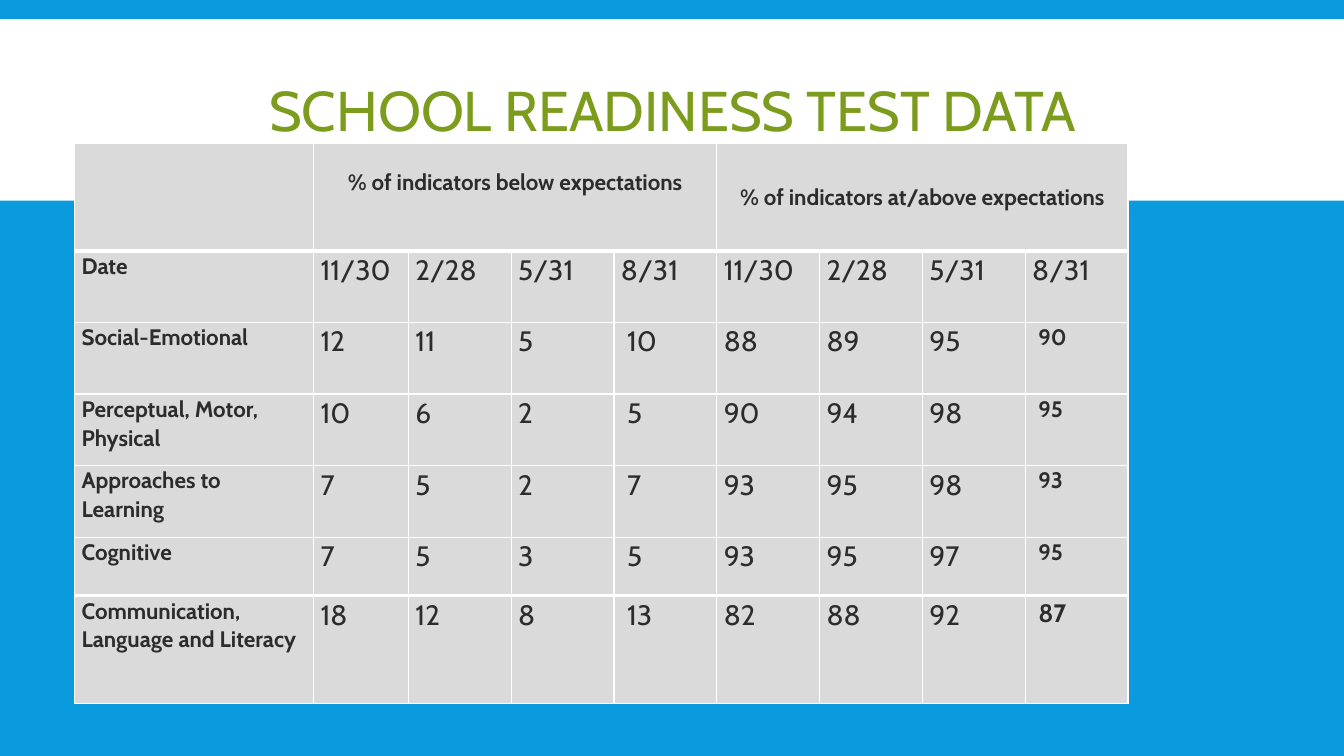
from dataclasses import dataclass
from lxml import etree
from pptx import Presentation
from pptx.dml.color import RGBColor
from pptx.enum.shapes import MSO_SHAPE
from pptx.enum.text import MSO_ANCHOR, MSO_AUTO_SIZE, PP_ALIGN
from pptx.oxml.ns import qn
from pptx.util import Pt

RECT = MSO_SHAPE.RECTANGLE
MID, TOP = MSO_ANCHOR.MIDDLE, MSO_ANCHOR.TOP
MID_X, LEFT = PP_ALIGN.CENTER, PP_ALIGN.LEFT
FIXED = MSO_AUTO_SIZE.NONE


@dataclass(frozen=True)
class Theme:
    font: str = "Cabin"
    back: str = "099BDD"
    white: str = "FFFFFF"
    head: str = "7C9C1E"
    ink: str = "2C2C2C"
    cell: str = "DADADA"
    title: int = 40
    label: int = 16
    last: int = 18
    value: int = 20
    thin: int = 1
    thick: int = 3


THEME = Theme()
TITLE = "SCHOOL READINESS TEST DATA"
GROUPS = ["% of indicators below expectations",
          "% of indicators at/above expectations"]
DATES = ["11/30", "2/28", "5/31", "8/31"]
DATA = [
    ("Social-Emotional", 12, 11, 5, 10, 88, 89, 95, 90),
    ("Perceptual, Motor, Physical", 10, 6, 2, 5, 90, 94, 98, 95),
    ("Approaches to Learning", 7, 5, 2, 7, 93, 95, 98, 93),
    ("Cognitive", 7, 5, 3, 5, 93, 95, 97, 95),
    ("Communication, Language and Literacy", 18, 12, 8, 13, 82, 88, 92, 87),
]
ROWS = [("Date", *DATES, *DATES)] + DATA

SCALE = 9144
SLIDE = (1333, 750)
BAND = (0, 19, 1333, 180)
TITLE_BOX = (132, 31, 1070, 165)
TABLE_AT = (74, 142)
WIDTHS = [237, 94] + [102] * 7
HEIGHTS = [107] + [71] * 4 + [58, 107]
PAD, INDENT, LIFT = 7, 6, 30
END = len(ROWS)


def px(*sizes):
    return [size * SCALE for size in sizes]


def rgb(code):
    return RGBColor.from_string(code)


def write(frame, text, size, color, bold, align, lead):
    para = frame.paragraphs[0]
    para.alignment = align
    para.line_spacing = lead
    run = para.add_run()
    run.text = text
    font = run.font
    font.name, font.size, font.bold = THEME.font, Pt(size), bold
    font.color.rgb = rgb(color)


def style(cell, row):
    above = THEME.thick if row in (1, END) else THEME.thin
    below = THEME.thick if row in (0, END - 1) else THEME.thin
    edges = {"a:lnL": THEME.thin, "a:lnR": THEME.thin,
             "a:lnT": above, "a:lnB": below}
    props = cell._tc.get_or_add_tcPr()
    for tag, width in edges.items():
        line = etree.SubElement(props, qn(tag), w=str(Pt(width)))
        fill = etree.SubElement(line, qn("a:solidFill"))
        etree.SubElement(fill, qn("a:srgbClr"), val=THEME.white)
    cell.fill.solid()
    cell.fill.fore_color.rgb = rgb(THEME.cell)


def put(cell, text, size, bold, align=LEFT, anchor=TOP, indent=0, lift=0):
    cell.margin_left, cell.margin_right = px(PAD + indent, PAD)
    cell.margin_top, cell.margin_bottom = px(0, lift)
    cell.vertical_anchor = anchor
    write(cell.text_frame, text, size, THEME.ink, bold, align, 1.07)


def add_grid(slide):
    box = px(*TABLE_AT, sum(WIDTHS), sum(HEIGHTS))
    grid = slide.shapes.add_table(len(HEIGHTS), len(WIDTHS), *box).table
    grid.first_row = grid.horz_banding = False
    for col, width in zip(grid.columns, px(*WIDTHS)):
        col.width = width
    for row, height in zip(grid.rows, px(*HEIGHTS)):
        row.height = height
    for r in range(len(HEIGHTS)):
        for c in range(len(WIDTHS)):
            style(grid.cell(r, c), r)

    span = len(DATES)
    for n, (text, lift) in enumerate(zip(GROUPS, (LIFT, 0))):
        first = 1 + n * span
        cell = grid.cell(0, first)
        cell.merge(grid.cell(0, first + span - 1))
        put(cell, text, THEME.label, True, MID_X, MID, lift=lift)

    final = len(WIDTHS) - 1
    for r, row in enumerate(ROWS, 1):
        for c, value in enumerate(row):
            bold = c == 0 or (c == final and r > 1)
            size = THEME.label if bold else THEME.value
            if (r, c) == (END, final):
                size = THEME.last
            indent = INDENT if r > 1 and c in (span, final) else 0
            put(grid.cell(r, c), str(value), size, bold, indent=indent)


def main():
    deck = Presentation()
    deck.slide_width, deck.slide_height = px(*SLIDE)
    slide = deck.slides.add_slide(deck.slide_layouts[5])
    back = slide.background.fill
    back.solid()
    back.fore_color.rgb = rgb(THEME.back)

    band = slide.shapes.add_shape(RECT, *px(*BAND))
    band.shadow.inherit = False
    band.fill.solid()
    band.fill.fore_color.rgb = rgb(THEME.white)
    band.line.fill.background()

    title = slide.shapes.title
    band.element.addnext(title.element)
    title.left, title.top, title.width, title.height = px(*TITLE_BOX)
    frame = title.text_frame
    frame.auto_size = FIXED
    frame.vertical_anchor = MID
    write(frame, TITLE, THEME.title, THEME.head, False, MID_X, 0.85)

    add_grid(slide)
    deck.save("out.pptx")


if __name__ == "__main__":
    main()
